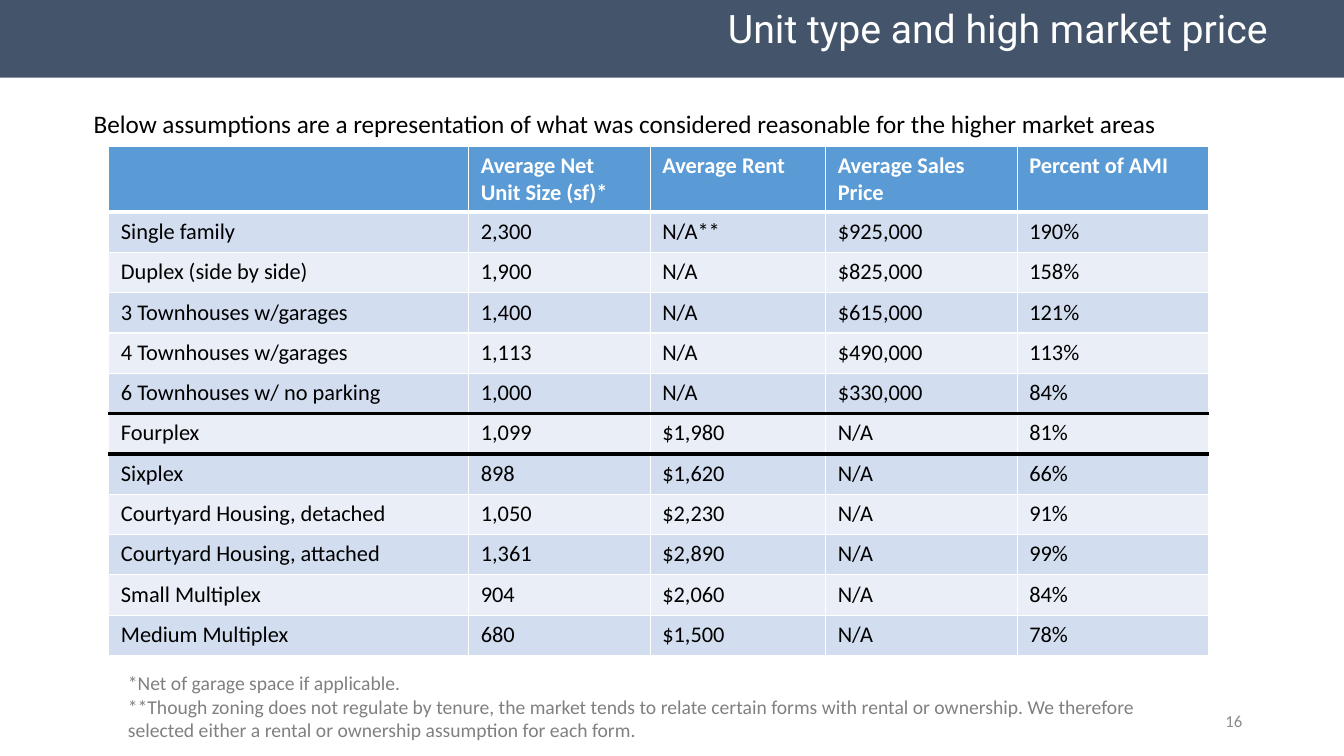
import pptx
import pptx.util
import pptx.dml.color
import pptx.enum.text
import pptx.enum.shapes
import pptx.oxml.xmlchemy
import lxml.etree

Inches = pptx.util.Inches
Pt = pptx.util.Pt
RGBColor = pptx.dml.color.RGBColor
Align = pptx.enum.text.PP_ALIGN
Anchor = pptx.enum.text.MSO_ANCHOR

NAVY = RGBColor(0x44, 0x54, 0x6A)
BLUE = RGBColor(0x5B, 0x9B, 0xD5)
DARK = RGBColor(0xD2, 0xDE, 0xEF)
PALE = RGBColor(0xEA, 0xEF, 0xF7)
WHITE = RGBColor(0xFF, 0xFF, 0xFF)
BLACK = RGBColor(0, 0, 0)
GRAY = RGBColor(0x80, 0x80, 0x80)
SILVER = RGBColor(0x8C, 0x8C, 0x8C)

HEADS = ["", "Average Net Unit Size (sf)*", "Average Rent",
         "Average Sales Price", "Percent of AMI"]
UNITS = [
    ["Single family", "2,300", "N/A**", "$925,000", "190%"],
    ["Duplex (side by side)", "1,900", "N/A", "$825,000", "158%"],
    ["3 Townhouses w/garages", "1,400", "N/A", "$615,000", "121%"],
    ["4 Townhouses w/garages", "1,113", "N/A", "$490,000", "113%"],
    ["6 Townhouses w/ no parking", "1,000", "N/A", "$330,000", "84%"],
    ["Fourplex", "1,099", "$1,980", "N/A", "81%"],
    ["Sixplex", "898", "$1,620", "N/A", "66%"],
    ["Courtyard Housing, detached", "1,050", "$2,230", "N/A", "91%"],
    ["Courtyard Housing, attached", "1,361", "$2,890", "N/A", "99%"],
    ["Small Multiplex", "904", "$2,060", "N/A", "84%"],
    ["Medium Multiplex", "680", "$1,500", "N/A", "78%"],
]
WIDTHS = [3.57, 1.8, 1.74, 1.9, 1.9]
HEAD_TALL, ROW_TALL = 0.64, 0.4
RULED = {5, 6}


def write(frame, text, size=16, font="Calibri", color=BLACK, bold=False,
          align=Align.LEFT, space=None):
    frame.word_wrap = True
    for i, line in enumerate(text.split("\n")):
        para = frame.paragraphs[0] if i == 0 else frame.add_paragraph()
        para.alignment = align
        if space:
            para.line_spacing = space
        run = para.add_run()
        run.text = line
        run.font.size = Pt(size)
        run.font.name = font
        run.font.bold = bold
        run.font.color.rgb = color


def label(slide, box, text, anchor=Anchor.TOP, **style):
    frame = slide.shapes.add_textbox(*map(Inches, box)).text_frame
    frame.vertical_anchor = anchor
    write(frame, text, **style)


def header(slide, box, text):
    left, top, wide, tall = box
    bar = slide.shapes.add_shape(
        pptx.enum.shapes.MSO_SHAPE.RECTANGLE, *map(Inches, box))
    bar.shadow.inherit = False
    bar.fill.solid()
    bar.fill.fore_color.rgb = NAVY
    bar.line.fill.background()
    label(slide, (left + 0.67, top + 0.05, wide - 1.33, tall - 0.06), text,
          size=28, font="Roboto", color=WHITE, align=Align.RIGHT, space=0.9)


def border(cell, side, color, width):
    space = "{http://schemas.openxmlformats.org/drawingml/2006/main}"
    props = cell._tc.get_or_add_tcPr()
    line = lxml.etree.SubElement(props, space + "ln" + side, w=str(Pt(width)))
    fill = lxml.etree.SubElement(line, space + "solidFill")
    lxml.etree.SubElement(fill, space + "srgbClr", val=str(color))


def edge(row):
    if row in RULED:
        return BLACK, 3
    return WHITE, 3 if row == 0 else 1


def paint(cell, row, text):
    border(cell, "L", WHITE, 1)
    border(cell, "R", WHITE, 1)
    border(cell, "T", *(edge(row - 1) if row else (WHITE, 1)))
    border(cell, "B", *edge(row))
    cell.fill.solid()
    cell.fill.fore_color.rgb = BLUE if row == 0 else DARK if row % 2 else PALE
    cell.margin_left = cell.margin_right = Inches(0.12)
    cell.margin_top = cell.margin_bottom = Inches(0.06)
    if text:
        write(cell.text_frame, text, bold=row == 0,
              color=BLACK if row else WHITE)


def prices(slide, box):
    rows = [HEADS] + UNITS
    table = slide.shapes.add_table(
        len(rows), len(HEADS), *map(Inches, box)).table
    for col, wide in zip(table.columns, WIDTHS):
        col.width = Inches(wide)
    for r, row in enumerate(rows):
        table.rows[r].height = Inches(ROW_TALL if r else HEAD_TALL)
        for c, text in enumerate(row):
            paint(table.cell(r, c), r, text)


def main():
    deck = pptx.Presentation()
    deck.slide_width, deck.slide_height = Inches(13.33), Inches(7.5)
    slide = deck.slides.add_slide(deck.slide_layouts[6])
    header(slide, (0, 0, 13.33, 0.77), "Unit type and high market price")
    label(slide, (9.42, 6.95, 3, 0.4), "16", anchor=Anchor.MIDDLE,
          size=12, color=SILVER, align=Align.RIGHT)
    prices(slide, (1.08, 1.45, 10.9, 5.04))
    label(slide, (1.17, 6.61, 10.5, 0.81),
          "*Net of garage space if applicable.\n"
          "**Though zoning does not regulate by tenure, the market tends to "
          "relate certain forms with rental or ownership. We therefore "
          "selected either a rental or ownership assumption for each form.",
          size=14, color=GRAY)
    label(slide, (0.83, 1.03, 11.41, 0.4),
          "Below assumptions are a representation of what was considered "
          "reasonable for the higher market areas", size=18)
    deck.save("out.pptx")


if __name__ == "__main__":
    main()
